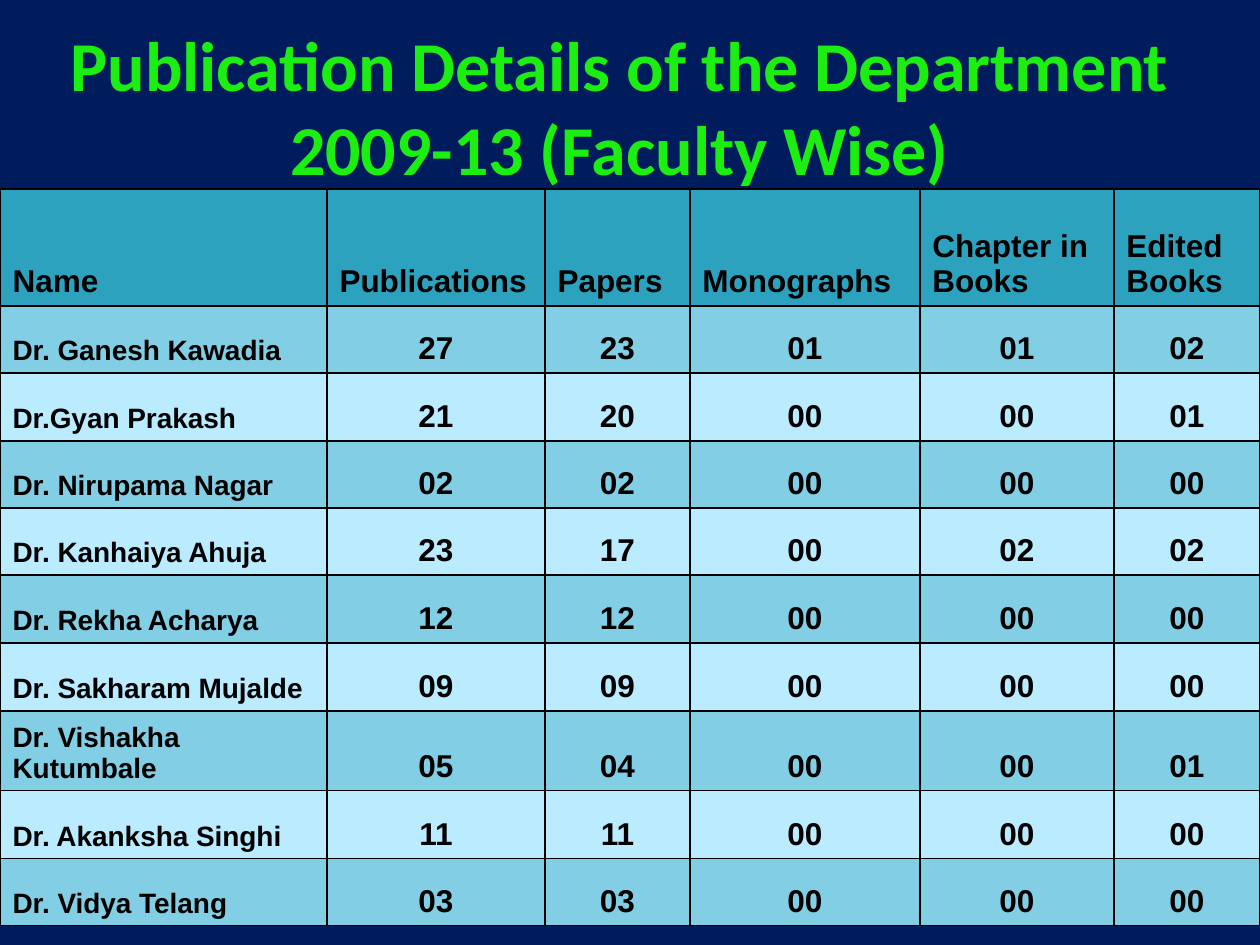
from typing import NamedTuple

from lxml import etree
from pptx import Presentation
from pptx.dml.color import RGBColor
from pptx.enum.text import MSO_ANCHOR, PP_ALIGN
from pptx.oxml.ns import qn
from pptx.util import Emu, Pt

LEFT, CENTER = PP_ALIGN.LEFT, PP_ALIGN.CENTER
MIDDLE, BOTTOM = MSO_ANCHOR.MIDDLE, MSO_ANCHOR.BOTTOM

EMU_PER_PX = 914400 // 126
EMU_PER_POINT = 12700
NAVY, GREEN, BLACK = "001C5D", "1CEE12", "000000"
HEADER_FILL, DARK_BAND, LIGHT_BAND = "2DA2BF", "82CEE5", "BAEBFF"


class Faculty(NamedTuple):
    name: str
    counts: str
    height: int


HEADINGS = ["Name", "Publications", "Papers", "Monographs",
            "Chapter in Books", "Edited Books"]
COLUMN_WIDTHS = [327, 218, 145, 230, 194, 146]
HEADER_HEIGHT = 117
FACULTY = [
    Faculty("Dr. Ganesh Kawadia", "27 23 01 01 02", 67),
    Faculty("Dr.Gyan Prakash", "21 20 00 00 01", 68),
    Faculty("Dr. Nirupama Nagar", "02 02 00 00 00", 67),
    Faculty("Dr. Kanhaiya Ahuja", "23 17 00 02 02", 67),
    Faculty("Dr. Rekha Acharya", "12 12 00 00 00", 68),
    Faculty("Dr. Sakharam Mujalde", "09 09 00 00 00", 68),
    Faculty("Dr. Vishakha Kutumbale", "05 04 00 00 01", 74),
    Faculty("Dr. Akanksha Singhi", "11 11 00 00 00", 68),
    Faculty("Dr. Vidya Telang", "03 03 00 00 00", 67),
]


def px(length: int) -> Emu:
    return Emu(length * EMU_PER_PX)


def color(hex_value: str) -> RGBColor:
    return RGBColor.from_string(hex_value)


def write(frame, text: str, *, size: int, font: str = "Arial",
          ink: str = BLACK, align=LEFT) -> None:
    frame.word_wrap = True
    paragraph = frame.paragraphs[0]
    paragraph.alignment = align
    run = paragraph.add_run()
    run.text = text
    run.font.name = font
    run.font.size = Pt(size)
    run.font.bold = True
    run.font.color.rgb = color(ink)


def add_borders(cell, ink: str, points: int) -> None:
    properties = cell._tc.get_or_add_tcPr()
    for position, side in enumerate(("a:lnL", "a:lnR", "a:lnT", "a:lnB")):
        line = etree.Element(qn(side), w=str(points * EMU_PER_POINT))
        fill = etree.SubElement(line, qn("a:solidFill"))
        etree.SubElement(fill, qn("a:srgbClr"), val=ink)
        properties.insert(position, line)


def fill_cell(cell, text: str, fill: str, *, size: int = 18, align=LEFT) -> None:
    cell.vertical_anchor = BOTTOM
    cell.fill.solid()
    cell.fill.fore_color.rgb = color(fill)
    add_borders(cell, BLACK, 1)
    write(cell.text_frame, text, size=size, align=align)


def add_title(slide) -> None:
    box = slide.shapes.add_textbox(px(42), px(32), px(1155), px(147))
    box.text_frame.vertical_anchor = MIDDLE
    write(box.text_frame,
          "Publication Details of the Department 2009-13 (Faculty Wise)",
          size=40, font="Calibri", ink=GREEN, align=CENTER)


def add_publication_table(slide) -> None:
    heights = [HEADER_HEIGHT] + [member.height for member in FACULTY]
    table = slide.shapes.add_table(
        len(heights), len(HEADINGS), px(0), px(189),
        px(sum(COLUMN_WIDTHS)), px(sum(heights))).table
    for column, width in zip(table.columns, COLUMN_WIDTHS):
        column.width = px(width)
    for row, height in zip(table.rows, heights):
        row.height = px(height)

    # Header row
    for column, heading in enumerate(HEADINGS):
        fill_cell(table.cell(0, column), heading, HEADER_FILL)

    # One banded row per faculty member
    for row, member in enumerate(FACULTY, start=1):
        band = DARK_BAND if row % 2 else LIGHT_BAND
        fill_cell(table.cell(row, 0), member.name, band, size=16)
        for column, count in enumerate(member.counts.split(), start=1):
            fill_cell(table.cell(row, column), count, band, align=CENTER)


def main() -> None:
    presentation = Presentation()
    presentation.slide_width, presentation.slide_height = px(1260), px(945)
    slide = presentation.slides.add_slide(presentation.slide_layouts[6])
    slide.background.fill.solid()
    slide.background.fill.fore_color.rgb = color(NAVY)
    add_title(slide)
    add_publication_table(slide)
    presentation.save("out.pptx")


if __name__ == "__main__":
    main()
